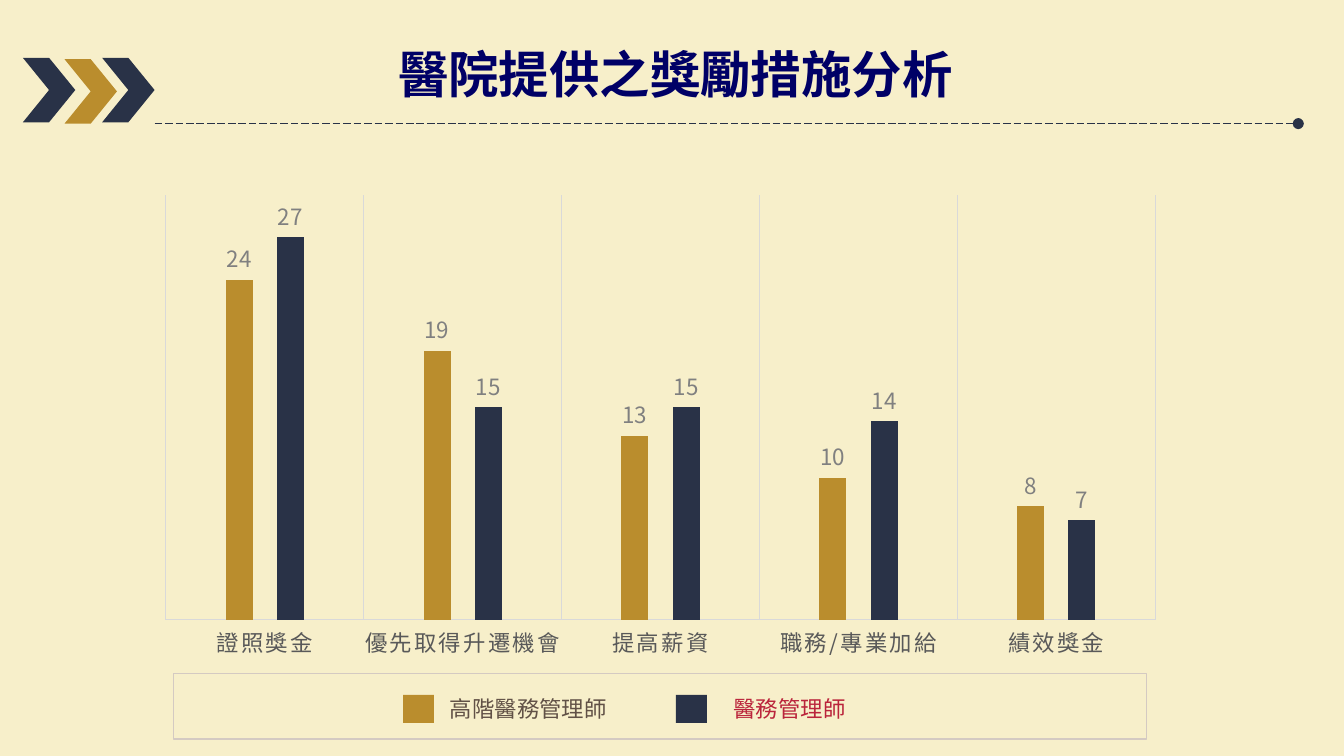
from lxml import etree
from pptx import Presentation
from pptx.chart.data import CategoryChartData
from pptx.dml.color import RGBColor
from pptx.enum import chart as ch, dml, shapes, text
from pptx.oxml import parse_xml
from pptx.oxml.ns import nsdecls, qn
from pptx.util import Inches, Pt

# Content
TITLE = "醫院提供之獎勵措施分析"
CATEGORIES = ["證照獎金", "優先取得升遷機會", "提高薪資", "職務/專業加給", "績效獎金"]
SERIES = [("Series 1", [24, 19, 13, 10, 8], "gold"),
          ("Series 2", [27, 15, 15, 14, 7], "navy")]
# label, label colour, key colour, key left, label left
LEGEND = [("高階醫務管理師", "brown", "gold", 3, 3.25),
          ("醫務管理師", "red", "navy", 5.03, 5.36)]
# left, top, colour
CHEVRONS = [(0.48, 0.44, "gold"), (0.76, 0.43, "navy"), (0.17, 0.43, "navy")]
COLORS = {"bg": "F7EFCA", "navy": "293247", "gold": "BA8D2D", "title": "000066",
          "brown": "615146", "red": "BA243B", "frame": "D4CAC2", "grid": "D9D9D9",
          "axis": "595959", "value": "808080"}
FONT, TITLE_FONT = "Noto Sans CJK SC", "Times New Roman"


def rgb(name):
    return RGBColor.from_string(COLORS[name])


def box(left, top, width, height):
    return [Inches(v) for v in (left, top, width, height)]


def set_font(font, color, size=12, name=FONT):
    font.name, font.size, font.color.rgb = name, Pt(size), rgb(color)
    font._element.find(qn("a:latin")).addnext(
        parse_xml(f'<a:ea {nsdecls("a")} typeface="{FONT}"/>'))


def add_solid(kind, place, color):
    sp = s.shapes.add_shape(kind, *box(*place))
    sp.shadow.inherit = False
    sp.fill.solid()
    sp.fill.fore_color.rgb = rgb(color)
    sp.line.fill.background()
    return sp


def set_line(line, color, width=0.75):
    line.color.rgb, line.width = rgb(color), Pt(width)


# Widescreen 16:9 slide
prs = Presentation()
prs.slide_width, prs.slide_height = Inches(10), Inches(10 * 9 / 16)
s = prs.slides.add_slide(prs.slide_layouts[5])
s.background.fill.solid()
s.background.fill.fore_color.rgb = rgb("bg")

# Title
title = s.shapes.title
title.left, title.top, title.width, title.height = box(1.59, 0.27, 6.87, 0.83)
tf = title.text_frame
tf.auto_size, tf.vertical_anchor = text.MSO_AUTO_SIZE.NONE, text.MSO_ANCHOR.TOP
p = tf.paragraphs[0]
p.alignment, p.line_spacing = text.PP_ALIGN.CENTER, 1.0
r = p.add_run()
r.text = TITLE
set_font(r.font, "title", 27, TITLE_FONT)
r.font.bold = True

# Dashed rule with a round end
rule = s.shapes.add_connector(shapes.MSO_CONNECTOR.STRAIGHT, *box(1.15, 0.92, 9.66, 0.92))
set_line(rule.line, "navy", 0.5)
rule.line.dash_style = dml.MSO_LINE.LONG_DASH
etree.SubElement(rule.line._get_or_add_ln(), qn("a:tailEnd"), type="oval")
etree.SubElement(rule._element.spPr, qn("a:effectLst"))

# Chevrons
for left, top, color in CHEVRONS:
    add_solid(shapes.MSO_SHAPE.CHEVRON, (left, top, 0.39, 0.48), color)

# Column chart
data = CategoryChartData()
data.categories = CATEGORIES
for name, values, _ in SERIES:
    data.add_series(name, values)
chart = s.shapes.add_chart(ch.XL_CHART_TYPE.COLUMN_CLUSTERED,
                           *box(1.08, 1.38, 7.67, 3.59), data).chart
chart.has_legend = chart.has_title = False
set_font(chart.font, "axis")
plot = chart.plots[0]
plot.gap_width, plot.overlap, plot.vary_by_categories = 444, -90, False
for series, (_, _, color) in zip(plot.series, SERIES):
    series.format.fill.solid()
    series.format.fill.fore_color.rgb = rgb(color)
    labels = series.data_labels
    labels.show_value = True
    labels.position = ch.XL_LABEL_POSITION.OUTSIDE_END
    set_font(labels.font, "value")

# Axes
val, cat = chart.value_axis, chart.category_axis
val.visible = val.has_major_gridlines = False
val.minimum_scale, val.maximum_scale = 0, 30
cat.major_tick_mark = ch.XL_TICK_MARK.NONE
cat.has_major_gridlines = True
set_line(cat.format.line, "grid")
set_line(cat.major_gridlines.format.line, "grid")
set_font(cat.tick_labels.font, "axis")
cat.tick_labels.font._element.set("spc", "120")

# Plot area inside the chart frame
area = chart._chartSpace.chart.plotArea
for old in area.findall(qn("c:layout")):
    area.remove(old)
sizes = "".join(f'<c:{k} val="{v}"/>' for k, v in
                [("x", 0.02), ("y", 0.02), ("w", 0.96), ("h", 0.88)])
area.insert(0, parse_xml(
    f'<c:layout {nsdecls("c")}><c:manualLayout><c:layoutTarget val="inner"/>'
    f'<c:xMode val="edge"/><c:yMode val="edge"/>{sizes}</c:manualLayout></c:layout>'))

# Legend
frame = add_solid(shapes.MSO_SHAPE.RECTANGLE, (1.29, 5.01, 7.24, 0.49), "bg")
frame.fill.background()
set_line(frame.line, "frame")
for label, color, key, key_left, label_left in LEGEND:
    add_solid(shapes.MSO_SHAPE.RECTANGLE, (key_left, 5.17, 0.23, 0.21), key)
    tf = s.shapes.add_textbox(*box(label_left, 5.12, 1.64, 0.3)).text_frame
    tf.word_wrap = True
    tf.auto_size = text.MSO_AUTO_SIZE.SHAPE_TO_FIT_TEXT
    r = tf.paragraphs[0].add_run()
    r.text = label
    set_font(r.font, color)

prs.save("out.pptx")
